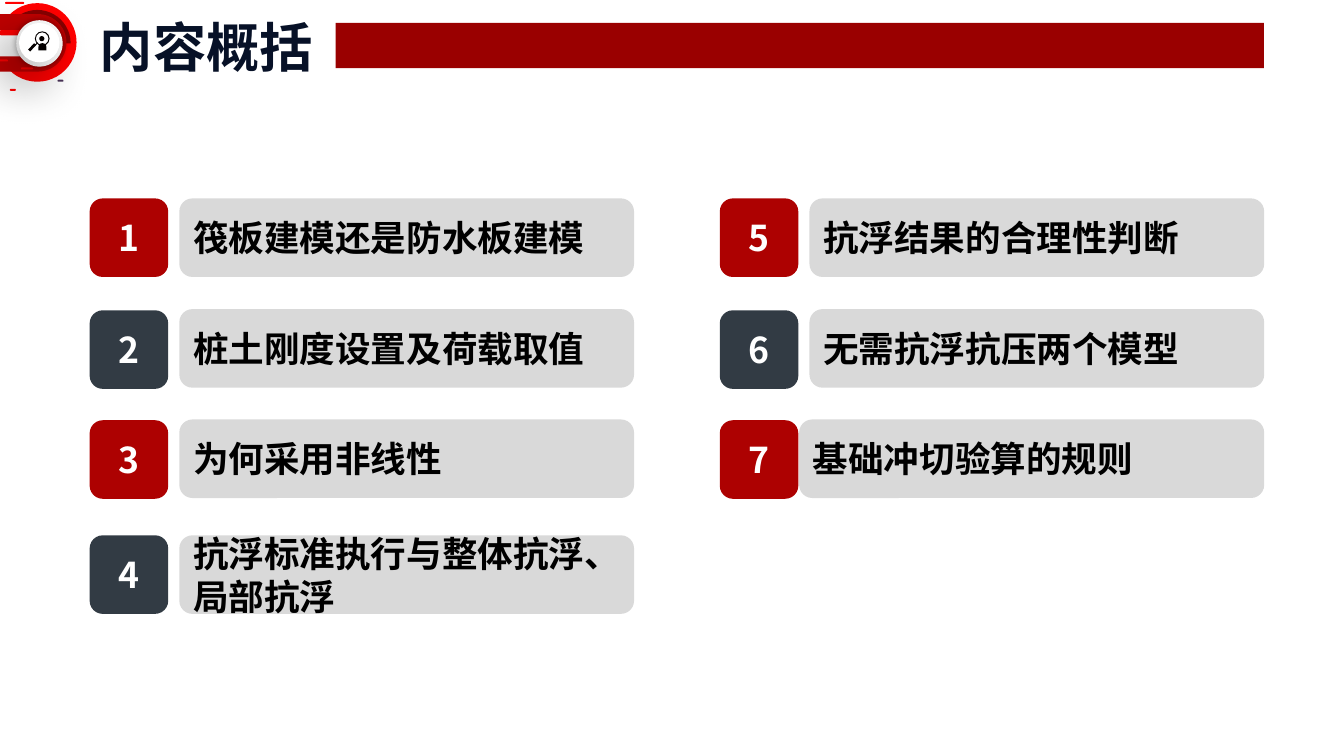
from lxml.etree import SubElement
from pptx import Presentation
from pptx.dml.color import RGBColor
from pptx.enum.shapes import MSO_SHAPE as Shape
from pptx.enum.text import MSO_ANCHOR as Anchor, PP_ALIGN as Align
from pptx.oxml.ns import qn
from pptx.util import Cm, Pt

FONT = "Noto Sans CJK SC"
TITLE = "内容概括"
TOPICS = [
    ["筏板建模还是防水板建模", "桩土刚度设置及荷载取值", "为何采用非线性",
     "抗浮标准执行与整体抗浮、局部抗浮"],
    ["抗浮结果的合理性判断", "无需抗浮抗压两个模型", "基础冲切验算的规则"],
]
RED, SLATE, GREY, WHITE, BLACK = "AD0101", "323B44", "D9D9D9", "FFFFFF", "000000"
BRIGHT, ICON = "FF0000", "040000"

# Grid of topics, in cm
COLUMN_LEFT, COLUMN_STEP, COLUMN_WIDTH = 2.26, 15.88, 13.72
BADGE_SIZE, LABEL_OFFSET = 1.98, 2.26
ROW_TOPS = [(5.0, 5.0), (7.82, 7.79), (10.59, 10.57), (13.49, 13.49)]
CLOSE_LABELS = {7: 2.0}  # topic number: label offset

# Emblem: shape, box in cm, fill, rotation, adjustments
EMBLEM = [
    (Shape.OVAL, (-0.05, 0.08, 1.98, 1.98), BRIGHT, 0, ()),
    (Shape.ROUNDED_RECTANGLE, (1.45, 2.01, 0.15, 0.05), "4A3359", 0, (0.5,)),
    (Shape.ROUNDED_RECTANGLE, (0.25, 2.24, 0.15, 0.05), BRIGHT, 0, (0.5,)),
    (Shape.PIE, (0.1, 0.25, 1.68, 1.68), "860000", 180, (0, 108)),
    (Shape.ROUNDED_RECTANGLE, (0.13, 0.05, 0.48, 0.05), BRIGHT, 0, (0.5,)),
    (Shape.ROUND_2_SAME_RECTANGLE, (-0.36, -0.23, 1.45, 2.62), "C00000", 90, (0.5, 0)),
    (Shape.ROUND_2_SAME_RECTANGLE, (-0.15, -0.03, 0.66, 2.24), "FCFCFC", 90, (0.5, 0)),
    (Shape.ROUNDED_RECTANGLE, (-0.03, 0.76, 0.79, 0.13), BRIGHT, 0, (0.5,)),
    (Shape.ROUNDED_RECTANGLE, (-0.1, 1.5, 0.3, 0.05), BRIGHT, 0, (0.5,)),
    (Shape.ROUNDED_RECTANGLE, (0.53, 1.7, 0.3, 0.05), BRIGHT, 0, (0.5,)),
]
# Knob: box in cm, then shadow opacity, blur, distance (pt) and angle
KNOB = [
    ((0.41, 0.51, 1.17, 1.17), (40, 5, 0, 0)),
    ((0.48, 0.58, 1.02, 0.99), (60, 37, 16, 130)),
]
SEARCH_ICON = [
    (Shape.OVAL, (0.99, 0.91, 0.13, 0.13), ICON, 0, ()),
    (Shape.ROUND_2_SAME_RECTANGLE, (0.97, 1.09, 0.2, 0.18), ICON, 0, (0.5, 0)),
    (Shape.DONUT, (0.88, 0.79, 0.37, 0.37), ICON, 0, (0.07,)),
]
HANDLE = [(0.71, 1.25), (0.86, 1.09), (0.89, 1.12), (0.94, 1.07),
          (0.96, 1.09), (0.91, 1.14), (0.76, 1.3)]


def color(hex_string):
    return RGBColor.from_string(hex_string)


def paint(shape, fill):
    shape.shadow.inherit = False
    shape.fill.solid()
    shape.fill.fore_color.rgb = color(fill)
    shape.line.fill.background()


def add_box(slide, kind, box, fill, rotation=0, adjustments=()):
    shape = slide.shapes.add_shape(kind, *map(Cm, box))
    paint(shape, fill)
    shape.rotation = rotation
    for index, value in enumerate(adjustments):
        shape.adjustments[index] = value
    return shape


def add_shadow(shape, opacity, blur, distance, angle):
    effects = shape._element.spPr.find(qn("a:effectLst"))
    shadow = SubElement(effects, qn("a:outerShdw"), blurRad=str(Pt(blur)),
                        dist=str(Pt(distance)), dir=str(angle * 60000),
                        algn="ctr", rotWithShape="0")
    tint = SubElement(shadow, qn("a:srgbClr"), val=BLACK)
    SubElement(tint, qn("a:alpha"), val=str(opacity * 1000))


def write(shape, text, *, size=25.4, fill=BLACK, align=Align.LEFT, anchor=Anchor.MIDDLE):
    frame = shape.text_frame
    frame.word_wrap = True
    frame.vertical_anchor = anchor
    paragraph = frame.paragraphs[0]
    paragraph.alignment = align
    run = paragraph.add_run()
    run.text = text
    font = run.font
    font.name, font.size, font.bold = FONT, Pt(size), True
    font.color.rgb = color(fill)
    east_asian = SubElement(run._r.get_or_add_rPr(), qn("a:ea"))
    east_asian.set("typeface", FONT)


def draw_emblem(slide):
    for part in EMBLEM:
        add_box(slide, *part)
    for box, shadow in KNOB:
        add_shadow(add_box(slide, Shape.OVAL, box, WHITE), *shadow)
    for part in SEARCH_ICON:
        add_box(slide, *part)
    points = [(Cm(x), Cm(y)) for x, y in HANDLE]
    builder = slide.shapes.build_freeform(*points[0])
    builder.add_line_segments(points[1:], close=True)
    paint(builder.convert_to_shape(), ICON)


def draw_topics(slide):
    number = 0
    for column, topics in enumerate(TOPICS):
        left = COLUMN_LEFT + column * COLUMN_STEP
        for row, (topic, (badge_top, label_top)) in enumerate(zip(topics, ROW_TOPS)):
            number += 1
            badge = add_box(slide, Shape.ROUNDED_RECTANGLE,
                            (left, badge_top, BADGE_SIZE, BADGE_SIZE),
                            SLATE if row % 2 else RED)
            write(badge, str(number), fill=WHITE, align=Align.CENTER)
            offset = CLOSE_LABELS.get(number, LABEL_OFFSET)
            label = add_box(slide, Shape.ROUNDED_RECTANGLE,
                            (left + offset, label_top, COLUMN_WIDTH - offset, BADGE_SIZE),
                            GREY)
            write(label, topic)


def main():
    presentation = Presentation()
    presentation.slide_width, presentation.slide_height = Cm(33.87), Cm(19.05)
    slide = presentation.slides.add_slide(presentation.slide_layouts[6])

    # Header
    draw_emblem(slide)
    title = slide.shapes.add_textbox(Cm(2.24), Cm(0.23), Cm(5.92), Cm(1.88))
    write(title, TITLE, size=38, fill="071127", align=Align.CENTER, anchor=Anchor.TOP)
    add_box(slide, Shape.RECTANGLE, (8.46, 0.58, 23.39, 1.14), "9A0000")

    # Numbered topics
    draw_topics(slide)
    presentation.save("out.pptx")


if __name__ == "__main__":
    main()
